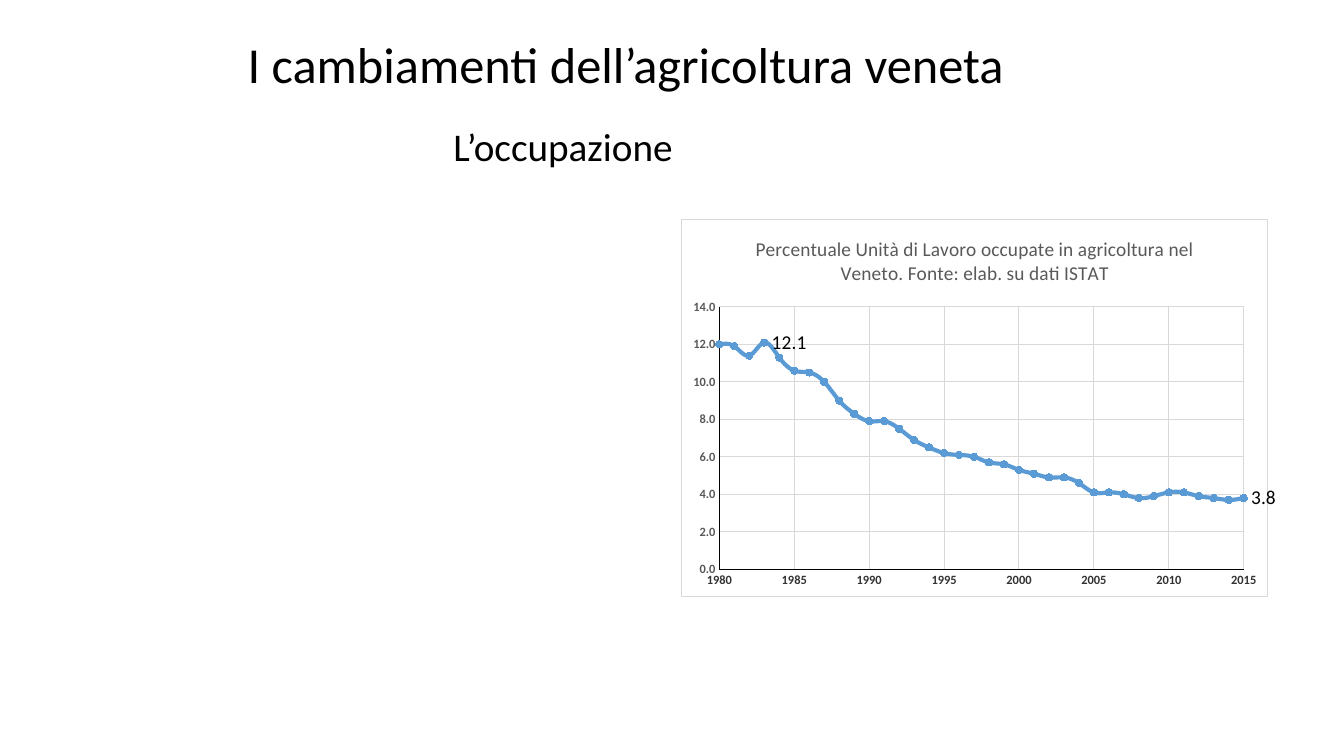
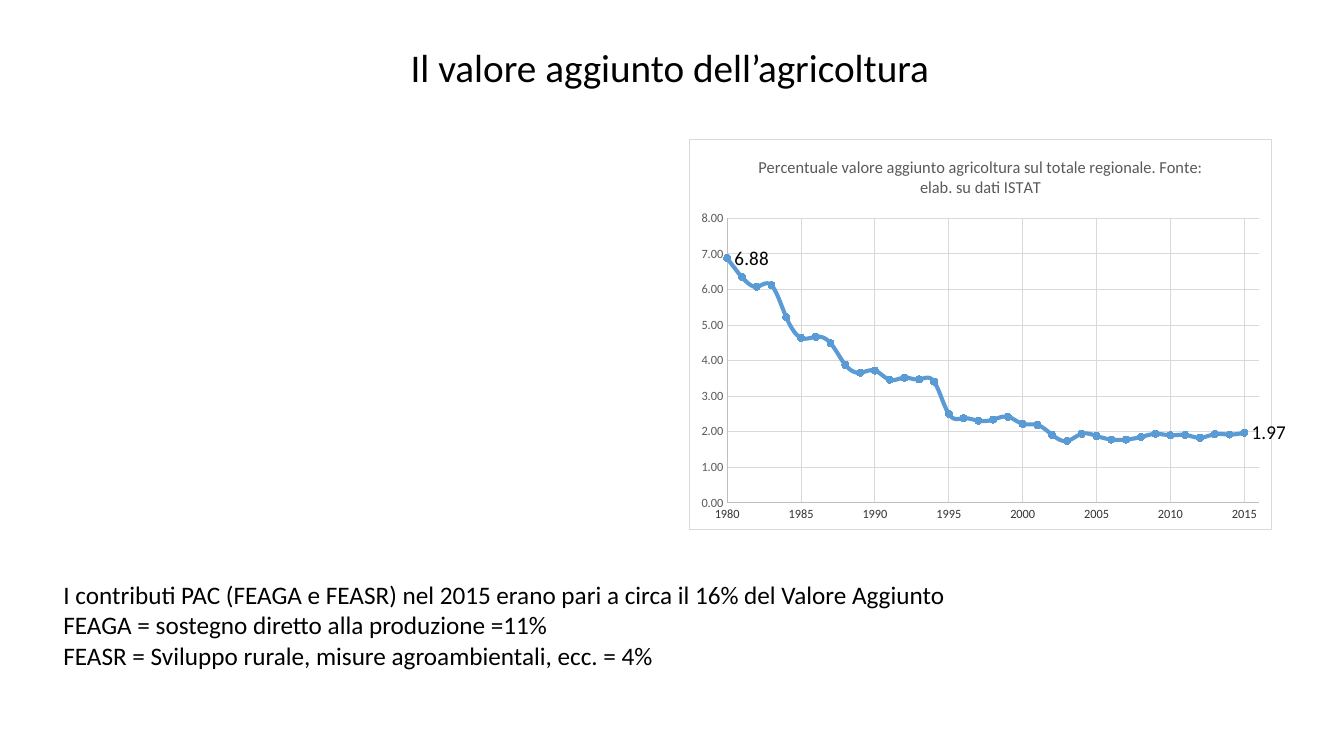
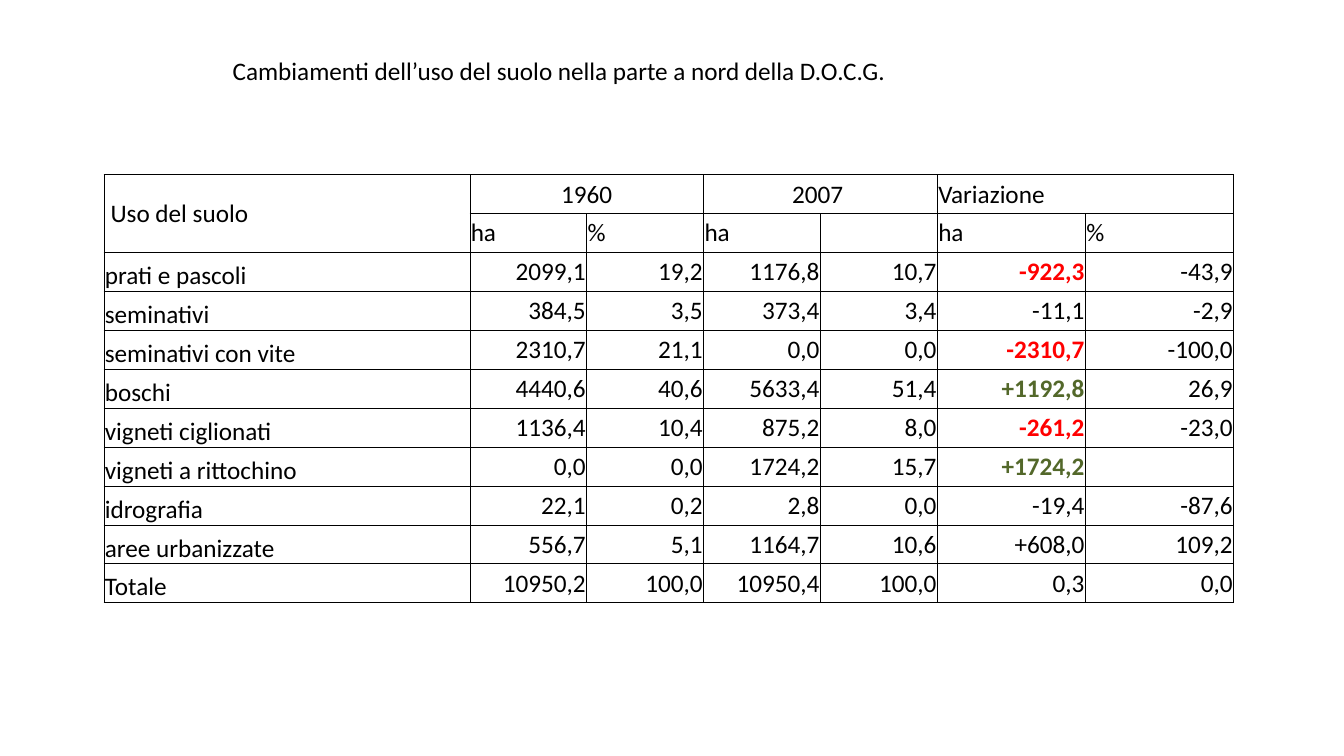
from dataclasses import dataclass
from typing import Any

from lxml import etree
from pptx import Presentation
from pptx.chart.data import XyChartData
from pptx.dml.color import RGBColor
from pptx.enum.chart import XL_CHART_TYPE, XL_LABEL_POSITION, XL_MARKER_STYLE, XL_TICK_MARK
from pptx.enum.text import MSO_ANCHOR, MSO_AUTO_SIZE, PP_ALIGN
from pptx.oxml import parse_xml
from pptx.oxml.ns import nsdecls, qn
from pptx.util import Pt

LEFT, MID, RIGHT = PP_ALIGN.LEFT, PP_ALIGN.CENTER, PP_ALIGN.RIGHT
CENTER, BOTTOM = MSO_ANCHOR.MIDDLE, MSO_ANCHOR.BOTTOM
GROW = MSO_AUTO_SIZE.SHAPE_TO_FIT_TEXT
SMOOTH = XL_CHART_TYPE.XY_SCATTER_SMOOTH
CIRCLE = XL_MARKER_STYLE.CIRCLE
BESIDE = XL_LABEL_POSITION.RIGHT
NO_TICK = XL_TICK_MARK.NONE

Box = tuple[float, float, float, float]


@dataclass(frozen=True)
class Theme:
    font: str = "Calibri"
    ink: str = "000000"
    paper: str = "FFFFFF"
    grey: str = "595959"
    dark: str = "333333"
    grid: str = "D9D9D9"
    blue: str = "5B9BD5"
    loss: str = "FF0000"
    gain: str = "53682A"
    head: float = 36
    sub: float = 28
    body: float = 18
    label: float = 14
    tick: float = 9
    base: float = 10
    hair: float = 0.75
    rule: float = 0.5


@dataclass(frozen=True)
class Graph:
    title: str
    size: float
    box: Box
    plot: Box  # inner plot area, as shares of the chart
    vals: list[float]
    marks: tuple[int, ...]
    form: str
    last: int
    top: float
    step: float
    axis: str
    bold: bool


T = Theme()
START = 1980

JOBS = Graph(
    title="Percentuale Unità di Lavoro occupate in agricoltura nel Veneto. Fonte: elab. su dati ISTAT",
    size=14, box=(486.7, 156.2, 424.8, 270), plot=(0.064, 0.233, 0.895, 0.696),
    vals=[12.0, 11.9, 11.4, 12.1, 11.3, 10.6, 10.5, 10.0, 9.0, 8.3, 7.9, 7.9,
          7.5, 6.9, 6.5, 6.2, 6.1, 6.0, 5.7, 5.6, 5.3, 5.1, 4.9, 4.9,
          4.6, 4.1, 4.1, 4.0, 3.8, 3.9, 4.1, 4.1, 3.9, 3.8, 3.7, 3.8],
    marks=(3, 35), form="0.0", last=2015, top=14, step=2, axis=T.ink, bold=True)

VALUE = Graph(
    title="Percentuale valore aggiunto agricoltura sul totale regionale. Fonte: elab. su dati ISTAT",
    size=12, box=(492.5, 99.4, 426.2, 279.4), plot=(0.064, 0.202, 0.915, 0.729),
    vals=[6.88, 6.35, 6.08, 6.12, 5.22, 4.64, 4.67, 4.49, 3.88, 3.66, 3.72, 3.46,
          3.52, 3.47, 3.41, 2.50, 2.38, 2.31, 2.34, 2.42, 2.22, 2.19, 1.91, 1.74,
          1.94, 1.88, 1.78, 1.78, 1.85, 1.94, 1.90, 1.91, 1.83, 1.93, 1.92, 1.97],
    marks=(0, 35), form="0.00", last=2016, top=8, step=1, axis="BFBFBF", bold=False)

NOTES = """I contributi PAC (FEAGA e FEASR) nel 2015 erano pari a circa il 16% del Valore Aggiunto
FEAGA = sostegno diretto alla produzione =11%
FEASR = Sviluppo rurale, misure agroambientali, ecc. = 4%"""

COLS = (261.4, 83.5, 83.5, 83.5, 83.5, 105.8, 105.9)
ROW = 27.82
HEADS = [" Uso del suolo;1960;;2007 ;;Variazione;", ";ha;%;ha;;ha;%"]
LAND = [
    "prati e pascoli;2099,1;19,2;1176,8;10,7;-922,3;-43,9",
    "seminativi;384,5;3,5;373,4;3,4;-11,1;-2,9",
    "seminativi con vite;2310,7;21,1;0,0;0,0;-2310,7;-100,0",
    "boschi;4440,6;40,6;5633,4;51,4;+1192,8;26,9",
    "vigneti ciglionati;1136,4;10,4;875,2;8,0;-261,2;-23,0",
    "vigneti a rittochino;0,0;0,0;1724,2;15,7;+1724,2;",
    "idrografia;22,1;0,2;2,8;0,0;-19,4;-87,6",
    "aree urbanizzate;556,7;5,1;1164,7;10,6;+608,0;109,2",
    "Totale;10950,2;100,0;10950,4;100,0;0,3;0,0",
]
TINTS = {"-922,3": T.loss, "-2310,7": T.loss, "-261,2": T.loss,
         "+1192,8": T.gain, "+1724,2": T.gain}


def style(font: Any, size: float, color: str = T.ink, bold: bool = False) -> None:
    font.name, font.size, font.bold = T.font, Pt(size), bold
    font.color.rgb = RGBColor.from_string(color)


def write(frame: Any, text: str, *, size: float = T.body, color: str = T.ink,
          bold: bool = False, align: Any = LEFT) -> None:
    for i, line in enumerate(text.split("\n")):
        para = frame.add_paragraph() if i else frame.paragraphs[0]
        para.alignment = align
        run = para.add_run()
        run.text = line
        style(run.font, size, color, bold)


def add_text(slide: Any, box: Box, text: str, **form: Any) -> None:
    frame = slide.shapes.add_textbox(*map(Pt, box)).text_frame
    frame.word_wrap = True
    frame.auto_size = GROW
    write(frame, text, **form)


def stroke(line: Any, color: str, width: float) -> None:
    line.color.rgb = RGBColor.from_string(color)
    line.width = Pt(width)


def set_axis(axis: Any, graph: Graph, color: str, low: float, high: float,
             step: float, form: str) -> None:
    axis.minimum_scale, axis.maximum_scale, axis.major_unit = low, high, step
    axis.major_tick_mark = axis.minor_tick_mark = NO_TICK
    axis.has_major_gridlines = True
    stroke(axis.major_gridlines.format.line, T.grid, T.hair)
    stroke(axis.format.line, graph.axis, T.hair)
    labels = axis.tick_labels
    labels.number_format, labels.number_format_is_linked = form, False
    style(labels.font, T.tick, color, graph.bold)


def set_frame(chart: Any, plot: Box) -> None:
    """Fix the inner plot area and give the chart its fill and border."""
    root = chart._chartSpace.find(qn("c:chart"))
    area = root.find(qn("c:plotArea"))
    for old in area.findall(qn("c:layout")):
        area.remove(old)
    parts = "".join(f'<c:{key} val="{val}"/>' for key, val in zip("xywh", plot))
    area.insert(0, parse_xml(
        f'<c:layout {nsdecls("c")}><c:manualLayout><c:layoutTarget val="inner"/>'
        f'<c:xMode val="edge"/><c:yMode val="edge"/>{parts}</c:manualLayout></c:layout>'))
    root.addnext(parse_xml(
        f'<c:spPr {nsdecls("c", "a")}>{solid(T.paper)}'
        f'<a:ln w="{Pt(T.hair)}">{solid(T.grid)}</a:ln></c:spPr>'))


def solid(color: str) -> str:
    return f'<a:solidFill><a:srgbClr val="{color}"/></a:solidFill>'


def add_graph(slide: Any, graph: Graph) -> None:
    data = XyChartData(number_format=graph.form)
    points = data.add_series("Series 1")
    for year, val in enumerate(graph.vals, START):
        points.add_data_point(year, val)
    chart = slide.shapes.add_chart(SMOOTH, *map(Pt, graph.box), data).chart
    style(chart.font, T.base)
    chart.has_legend = False
    chart.has_title = True
    write(chart.chart_title.text_frame, graph.title, size=graph.size,
          color=T.grey, align=MID)
    set_axis(chart.category_axis, graph, T.dark, START, graph.last, 5, "General")
    set_axis(chart.value_axis, graph, T.grey, 0, graph.top, graph.step, graph.form)
    plot = chart.plots[0]
    plot.vary_by_categories = False
    series = plot.series[0]
    stroke(series.format.line, T.blue, 3)
    series.marker.style, series.marker.size = CIRCLE, 5
    series.marker.format.fill.solid()
    series.marker.format.fill.fore_color.rgb = RGBColor.from_string(T.blue)
    stroke(series.marker.format.line, T.blue, T.hair)
    for mark in graph.marks:
        label = series.points[mark].data_label
        style(label.font, T.label)
        label.position = BESIDE
    for curve in series._element.findall(qn("c:smooth")):
        curve.set("val", "1")
    set_frame(chart, graph.plot)


def set_edges(cell: Any) -> None:
    props = cell._tc.get_or_add_tcPr()
    for i, side in enumerate(("lnL", "lnR", "lnT", "lnB")):
        edge = etree.Element(qn(f"a:{side}"), w=str(Pt(T.rule)))
        fill = etree.SubElement(edge, qn("a:solidFill"))
        etree.SubElement(fill, qn("a:srgbClr"), val=T.ink)
        props.insert(i, edge)


def add_land(slide: Any, left: float, top: float) -> None:
    rows = [line.split(";") for line in HEADS + LAND]
    table = slide.shapes.add_table(len(rows), len(COLS), Pt(left), Pt(top),
                                   Pt(sum(COLS)), Pt(ROW * len(rows))).table
    table.first_row = table.horz_banding = False
    for col, width in zip(table.columns, COLS):
        col.width = Pt(width)
    for r, row in enumerate(rows):
        table.rows[r].height = Pt(ROW)
        for c, text in enumerate(row):
            cell = table.cell(r, c)
            data = r >= len(HEADS)
            cell.margin_left = cell.margin_right = cell.margin_top = Pt(0.7)
            cell.margin_bottom = 0
            cell.vertical_anchor = BOTTOM if data and c == 0 else CENTER
            cell.fill.background()
            set_edges(cell)
            if text:
                align = RIGHT if data and c else MID if r == 0 and c in (1, 3) else LEFT
                write(cell.text_frame, text, align=align,
                      color=TINTS.get(text, T.ink), bold=text in TINTS)
    table.cell(0, 0).merge(table.cell(1, 0))
    for c in (1, 3, 5):
        table.cell(0, c).merge(table.cell(0, c + 1))


def main() -> None:
    deck = Presentation()
    deck.slide_width, deck.slide_height = Pt(960), Pt(540)
    jobs, value, land = (deck.slides.add_slide(deck.slide_layouts[6]) for _ in range(3))

    add_text(jobs, (54.7, 20.2, 784.8, 51), "I cambiamenti dell’agricoltura veneta",
             size=T.head, align=MID)
    add_text(jobs, (38.9, 83.5, 726.5, 41), "L’occupazione", size=T.sub, align=MID)
    add_graph(jobs, JOBS)

    add_text(value, (75.6, 27.4, 805.7, 41), "Il valore aggiunto dell’agricoltura",
             size=T.sub, align=MID)
    add_graph(value, VALUE)
    add_text(value, (38.2, 410.4, 880.6, 75), NOTES)

    add_text(land, (159.1, 36, 621.4, 29),
             "Cambiamenti dell’uso del suolo nella parte a nord della D.O.C.G.")
    add_land(land, 74.2, 124.6)
    deck.save("out.pptx")


if __name__ == "__main__":
    main()
